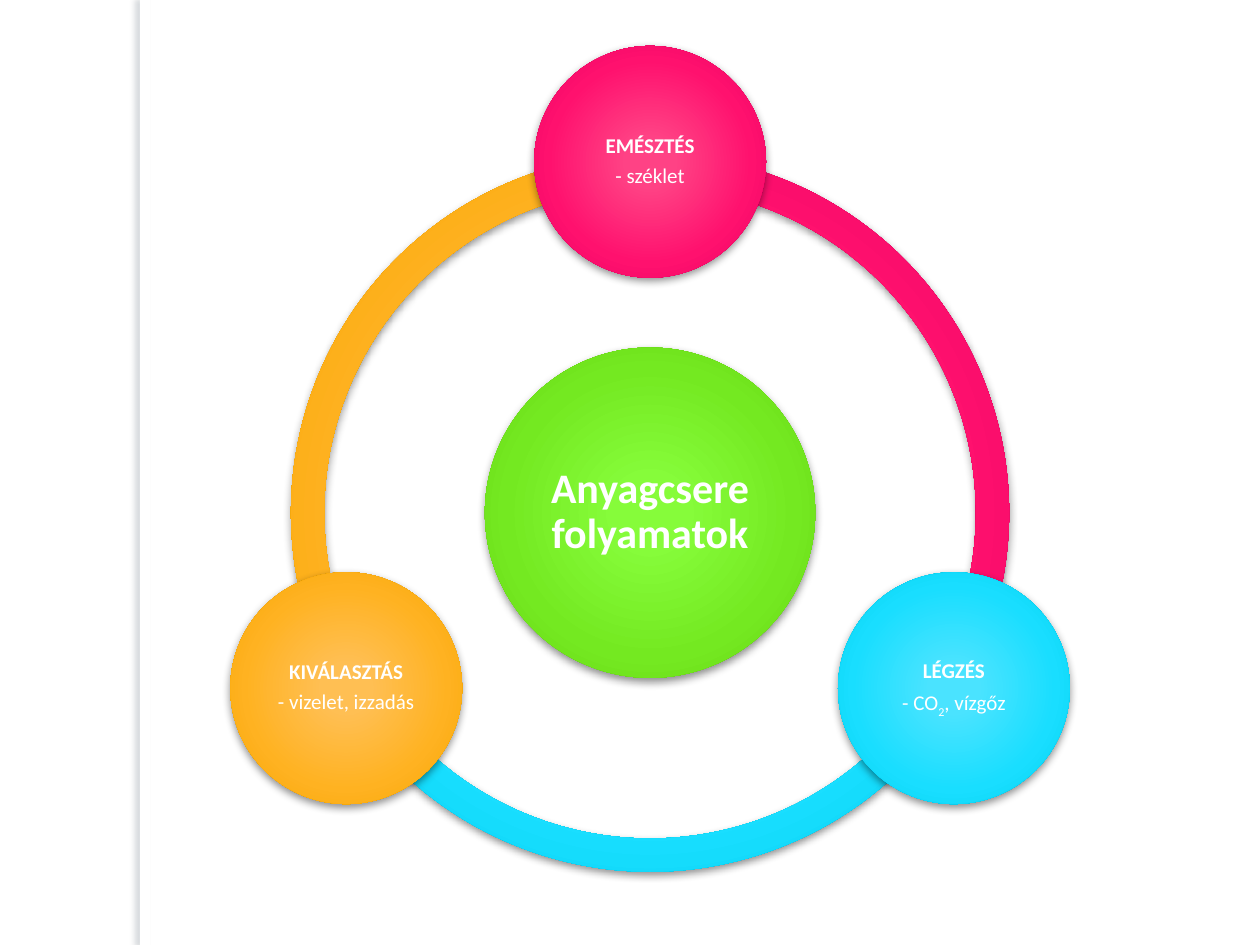
from math import cos, radians, sin

from pptx import Presentation
from pptx.dml.color import RGBColor
from pptx.enum.shapes import MSO_SHAPE
from pptx.enum.text import MSO_ANCHOR, PP_ALIGN
from pptx.oxml import parse_xml
from pptx.oxml.ns import nsdecls
from pptx.util import Pt

ARC, OVAL, RECT = MSO_SHAPE.BLOCK_ARC, MSO_SHAPE.OVAL, MSO_SHAPE.RECTANGLE
MIDDLE, CENTER = MSO_ANCHOR.MIDDLE, PP_ALIGN.CENTER

COLORS = {"white": "FFFFFF", "black": "000000", "grey": "697580"}
STOPS = (0, 15, 62, 97, 100)
GRADS = {
    "green": ("86FD3A", "86FC3A", "74E921", "66D313", "63D405"),
    "pink": ("FF4386", "FF4285", "FF116E", "E80061", "CF0062"),
    "cyan": ("4CE3FF", "4AE3FF", "19DEFF", "00CFEF", "00BAD3"),
    "gold": ("FFBF54", "FFBF53", "FFB221", "F6A500", "D69900"),
}
MID_X, MID_Y = 371.5, 293
RING, HUB, NODE, ORBIT = 410.4, 188.8, 132.5, 200.5
ARCS = (("gold", 90, 162), ("cyan", 18, 90), ("pink", 162, 18))
NODES = (
    ("pink", -90, "EMÉSZTÉS", ("- széklet",)),
    ("cyan", 30, "LÉGZÉS", ("- CO", "2", ", vízgőz")),
    ("gold", 150, "KIVÁLASZTÁS", ("- vizelet, izzadás",)),
)


def add_shade(shape, color, alpha, blur, dist, angle):
    """Give the shape an outer shadow and no outline."""
    shape.line.fill.background()
    shape._element.spPr.append(parse_xml(
        f'<a:effectLst {nsdecls("a")}><a:outerShdw blurRad="{Pt(blur)}" '
        f'dist="{Pt(dist)}" dir="{angle * 60000}" rotWithShape="0">'
        f'<a:srgbClr val="{COLORS[color]}"><a:alpha val="{alpha * 1000}"/>'
        '</a:srgbClr></a:outerShdw></a:effectLst>'))


def add_grad(shape, name):
    """Fill the shape with a round gradient."""
    stops = "".join(
        f'<a:gs pos="{pos * 1000}"><a:srgbClr val="{color}"/></a:gs>'
        for pos, color in zip(STOPS, GRADS[name]))
    shape._element.spPr.insert(2, parse_xml(
        f'<a:gradFill {nsdecls("a")} rotWithShape="1"><a:gsLst>{stops}</a:gsLst>'
        '<a:path path="circle"><a:fillToRect l="50000" t="50000" r="50000" '
        'b="50000"/></a:path></a:gradFill>'))


def add_round(slide, kind, x, y, size, color):
    """Add a glowing round shape centred on x, y."""
    shape = slide.shapes.add_shape(
        kind, Pt(x - size / 2), Pt(y - size / 2), Pt(size), Pt(size))
    add_grad(shape, color)
    add_shade(shape, "black", 43, 5, 2, 90)
    return shape


def add_arc(slide, color, start, end):
    """Add one third of the ring."""
    arc = add_round(slide, ARC, MID_X, MID_Y, RING, color)
    for i, value in enumerate((start, end, 0.0464)):
        arc.adjustments[i] = value


def set_frame(shape, inset):
    """Prepare the text frame of a disc."""
    frame = shape.text_frame
    frame.word_wrap = True
    frame.vertical_anchor = MIDDLE
    frame.margin_left = frame.margin_right = Pt(inset)
    frame.margin_top = frame.margin_bottom = Pt(inset)
    return frame


def style(para, size, bold):
    """Format a paragraph and its runs."""
    para.alignment = CENTER
    para.line_spacing = 0.9
    para.space_after = Pt(size * 0.35)
    for run in para.runs:
        run.font.name = "Calibri"
        run.font.size = Pt(size)
        run.font.bold = bold
        run.font.color.rgb = RGBColor.from_string(COLORS["white"])


def add_hub(slide):
    """Add the central disc with the topic."""
    frame = set_frame(add_round(slide, OVAL, MID_X, MID_Y, HUB, "green"), 2.4)
    frame.text = "Anyagcsere folyamatok"
    style(frame.paragraphs[0], 24, True)


def add_node(slide, color, angle, head, parts):
    """Add a disc on the orbit; every second part of its note is subscript."""
    turn = radians(angle)
    x, y = MID_X + ORBIT * cos(turn), MID_Y + ORBIT * sin(turn)
    frame = set_frame(add_round(slide, OVAL, x, y, NODE, color), 1.2)
    frame.text = head
    style(frame.paragraphs[0], 12, True)
    note = frame.add_paragraph()
    for i, part in enumerate(parts):
        run = note.add_run()
        run.text = part
        if i % 2:
            run._r.get_or_add_rPr().set("baseline", "-25000")
    style(note, 12, False)


def add_strip(slide):
    """Add the white strip that shades the left margin."""
    strip = slide.shapes.add_shape(RECT, Pt(80), Pt(0), Pt(5.76), Pt(540))
    strip.fill.solid()
    strip.fill.fore_color.rgb = RGBColor.from_string(COLORS["white"])
    add_shade(strip, "grey", 25, 3, 3, 180)


def main():
    """Build the slide and save it."""
    deck = Presentation()
    deck.slide_width, deck.slide_height = Pt(720), Pt(540)
    slide = deck.slides.add_slide(deck.slide_layouts[6])
    add_strip(slide)
    for arc in ARCS:
        add_arc(slide, *arc)
    add_hub(slide)
    for node in NODES:
        add_node(slide, *node)
    deck.save("out.pptx")


if __name__ == "__main__":
    main()
